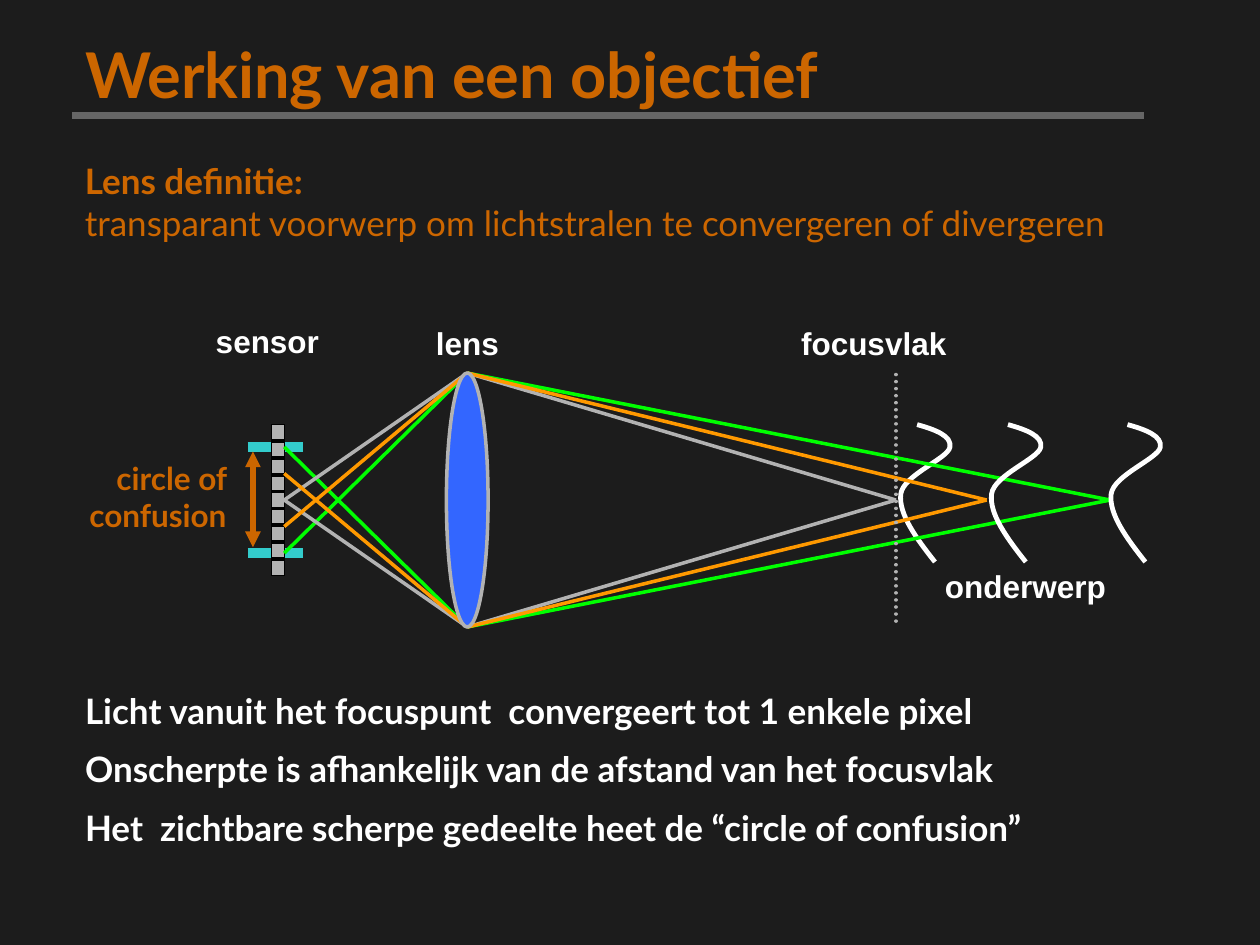
from lxml.etree import SubElement
from pptx import Presentation
from pptx.dml.color import RGBColor
from pptx.enum.dml import MSO_LINE
from pptx.enum.shapes import MSO_CONNECTOR, MSO_SHAPE
from pptx.enum.text import MSO_ANCHOR, MSO_AUTO_SIZE, PP_ALIGN
from pptx.oxml.ns import qn
from pptx.util import Cm, Pt

COLORS = {
    "background": "1C1C1C", "rule": "666666", "accent": "CC6600",
    "text": "FFFFFF", "gray": "B2B2B2", "green": "00FF00",
    "orange": "FF9900", "lens": "3366FF", "mark": "33CCCC", "black": "000000",
}
HEADING = {"name": "Lato", "size": Pt(36), "bold": True}
BODY = {"name": "Lato", "size": Pt(20), "bold": True}
LABEL = {"name": "Arial", "size": Pt(18), "bold": True}


def color(name):
    return RGBColor.from_string(COLORS[name])


def style(font, values, color_name):
    for key, value in values.items():
        setattr(font, key, value)
    font.color.rgb = color(color_name)


def set_frame(tf, anchor=MSO_ANCHOR.TOP):
    for key, value in {"word_wrap": True, "auto_size": MSO_AUTO_SIZE.NONE,
                       "vertical_anchor": anchor}.items():
        setattr(tf, key, value)


def place(sp, left, top, width, height):
    for key, value in zip(("left", "top", "width", "height"),
                          (left, top, width, height)):
        setattr(sp, key, Cm(value))


def add_text(s, text, box, values, color_name, align=PP_ALIGN.LEFT):
    sp = s.shapes.add_textbox(*map(Cm, box))
    set_frame(sp.text_frame)
    p = sp.text_frame.paragraphs[0]
    p.alignment = align
    r = p.add_run()
    r.text = text
    style(r.font, values, color_name)
    return p


def add_line(s, start, end, color_name, width):
    line = s.shapes.add_connector(MSO_CONNECTOR.STRAIGHT,
                                  *map(Cm, (*start, *end)))
    line.line.color.rgb = color(color_name)
    line.line.width = Pt(width)
    SubElement(line._element.spPr, qn("a:effectLst"))
    return line


def add_solid(s, kind, box, fill, outline, width):
    sp = s.shapes.add_shape(kind, *map(Cm, box))
    sp.shadow.inherit = False
    if fill:
        sp.fill.solid()
        sp.fill.fore_color.rgb = color(fill)
    else:
        sp.fill.background()
    sp.line.color.rgb = color(outline)
    sp.line.width = Pt(width)


    return sp


def curve_segments(sp):
    """Turn every three straight segments of a freeform into one Bezier curve."""
    outline = sp._element.spPr.find(".//" + qn("a:path"))
    segments = outline.findall(qn("a:lnTo"))
    for i in range(0, len(segments), 3):
        curve = SubElement(outline, qn("a:cubicBezTo"))
        for segment in segments[i:i + 3]:
            curve.append(segment[0])
            outline.remove(segment)


def add_subject(s, x, y):
    """Wavy outline of a subject, starting at its upper end."""
    controls = [(.36, .1), (.71, .23), (.66, .46), (.61, .69), (-.28, 1.02),
                (-.33, 1.4), (-.38, 1.8), (-.02, 2.29), (.36, 2.77)]
    builder = s.shapes.build_freeform(Cm(x), Cm(y), scale=1.0)
    builder.add_line_segments([(Cm(x + dx), Cm(y + dy)) for dx, dy in controls],
                              close=False)
    sp = builder.convert_to_shape()
    curve_segments(sp)
    sp.shadow.inherit = False
    sp.fill.background()
    sp.line.color.rgb = color("text")
    sp.line.width = Pt(2.75)


def add_heading(s, left, top, width, height):
    add_line(s, (left, top + 1.9), (left + width, top + 1.9), "rule", 4)
    title = s.shapes.title
    place(title, left, top, width, height)
    set_frame(title.text_frame, MSO_ANCHOR.MIDDLE)
    p = title.text_frame.paragraphs[0]
    p.alignment = PP_ALIGN.LEFT
    r = p.add_run()
    r.text = "Werking van een objectief"
    style(r.font, HEADING, "accent")


def add_definition(s, *box):
    p = add_text(s, "Lens definitie: ", box, BODY, "accent")
    p.add_line_break()
    r = p.add_run()
    r.text = "transparant voorwerp om lichtstralen te convergeren of divergeren"
    style(r.font, {**BODY, "bold": False}, "accent")


def add_sensor(s, left, top, width, height, spread):
    middle = top + height / 2
    for y in (middle - spread, middle + spread):
        add_line(s, (left - .49, y), (left + .63, y), "mark", 6)
    box = (left, top, width, height)
    sensor = add_solid(s, MSO_SHAPE.RECTANGLE, box, "gray", "black", .75)
    pixels = 9
    for i in range(1, pixels):
        y = top + height * i / pixels
        add_line(s, (left, y), (left + width, y), "black", 2)
    add_solid(s, MSO_SHAPE.RECTANGLE, box, None, "black", .75)
    return sensor


def add_diagram(s, left, top):
    axis = top + 3.68
    lens_x, lens_half = left + 8.42, 2.56
    lens_ends = (axis - lens_half, axis + lens_half)
    plane_x = left + 17.06
    sensor_x, sensor_w, sensor_h = left + 4.48, .25, 3.05
    face, spread = sensor_x + sensor_w, 1.07
    subject_y = top + 2.16

    add_subject(s, left + 17.49, subject_y)
    sensor = add_sensor(s, sensor_x, axis - sensor_h / 2, sensor_w, sensor_h,
                        spread)

    # Rays: subject point to the lens edges, then crossing to the sensor
    for name, focus_x, blur in (("green", left + 21.38, spread),
                                ("gray", plane_x, 0),
                                ("orange", left + 18.89, spread / 2)):
        for edge, hit in zip(lens_ends, (axis + blur, axis - blur)):
            add_line(s, (focus_x, axis), (lens_x, edge), name, 2)
            ray = add_line(s, (lens_x, edge), (face, hit), name, 2)
            if not blur:
                ray.end_connect(sensor, 3)

    # Focus plane and lens
    plane = add_line(s, (plane_x, axis - 2.53), (plane_x, axis + 2.53),
                     "gray", 2)
    plane.line.dash_style = MSO_LINE.ROUND_DOT
    plane.line._get_or_add_ln().set("cap", "rnd")
    add_solid(s, MSO_SHAPE.OVAL,
              (lens_x - .42, lens_ends[0], .84, 2 * lens_half),
              "lens", "gray", 2)
    for x in (19.32, 21.73):
        add_subject(s, left + x, subject_y)

    # Extent of the circle of confusion
    arrow = add_line(s, (left + 4.1, axis + .95), (left + 4.1, axis - .98),
                     "accent", 3)
    ln = arrow.line._get_or_add_ln()
    for end in ("a:headEnd", "a:tailEnd"):
        SubElement(ln, qn(end), type="triangle")

    # Labels
    for text, x, y, width in (("sensor", 3.1, -.03, 3.05),
                              ("lens", 7.54, 0, 1.85),
                              ("focusvlak", 14.9, 0, 5.08),
                              ("onderwerp", 17.8, 4.9, 5.08)):
        add_text(s, text, (left + x, top + y, width, 1.02), LABEL, "text")
    add_text(s, "circle of confusion", (left - .03, top + 2.72, 3.85, 1.78),
             {**LABEL, "name": "Lato"}, "accent", PP_ALIGN.RIGHT)


def add_conclusions(s, *box):
    body = s.placeholders[1]
    place(body, *box)
    tf = body.text_frame
    set_frame(tf)
    lines = ("Licht vanuit het focuspunt  convergeert tot 1 enkele pixel",
             "Onscherpte is afhankelijk van de afstand van het focusvlak",
             "Het  zichtbare scherpe gedeelte heet de “circle of confusion”")
    for i, text in enumerate(lines):
        p = tf.add_paragraph() if i else tf.paragraphs[0]
        p.space_before, p.space_after = Pt(0), Pt(9.4)
        pPr = p._p.get_or_add_pPr()
        pPr.set("marL", "0")
        pPr.set("indent", "0")
        SubElement(pPr, qn("a:buNone"))
        r = p.add_run()
        r.text = text
        style(r.font, BODY, "text")


def main():
    prs = Presentation()
    prs.slide_width, prs.slide_height = Cm(25.4), Cm(19.05)
    s = prs.slides.add_slide(prs.slide_layouts[1])
    s.background.fill.solid()
    s.background.fill.fore_color.rgb = color("background")
    add_heading(s, 1.46, .42, 21.6, 2.11)
    add_definition(s, 1.46, 3.1, 22.53, 1.96)
    add_diagram(s, 1, 6.4)
    add_conclusions(s, 1.46, 13.77, 21, 3.5)
    prs.save("out.pptx")


if __name__ == "__main__":
    main()
